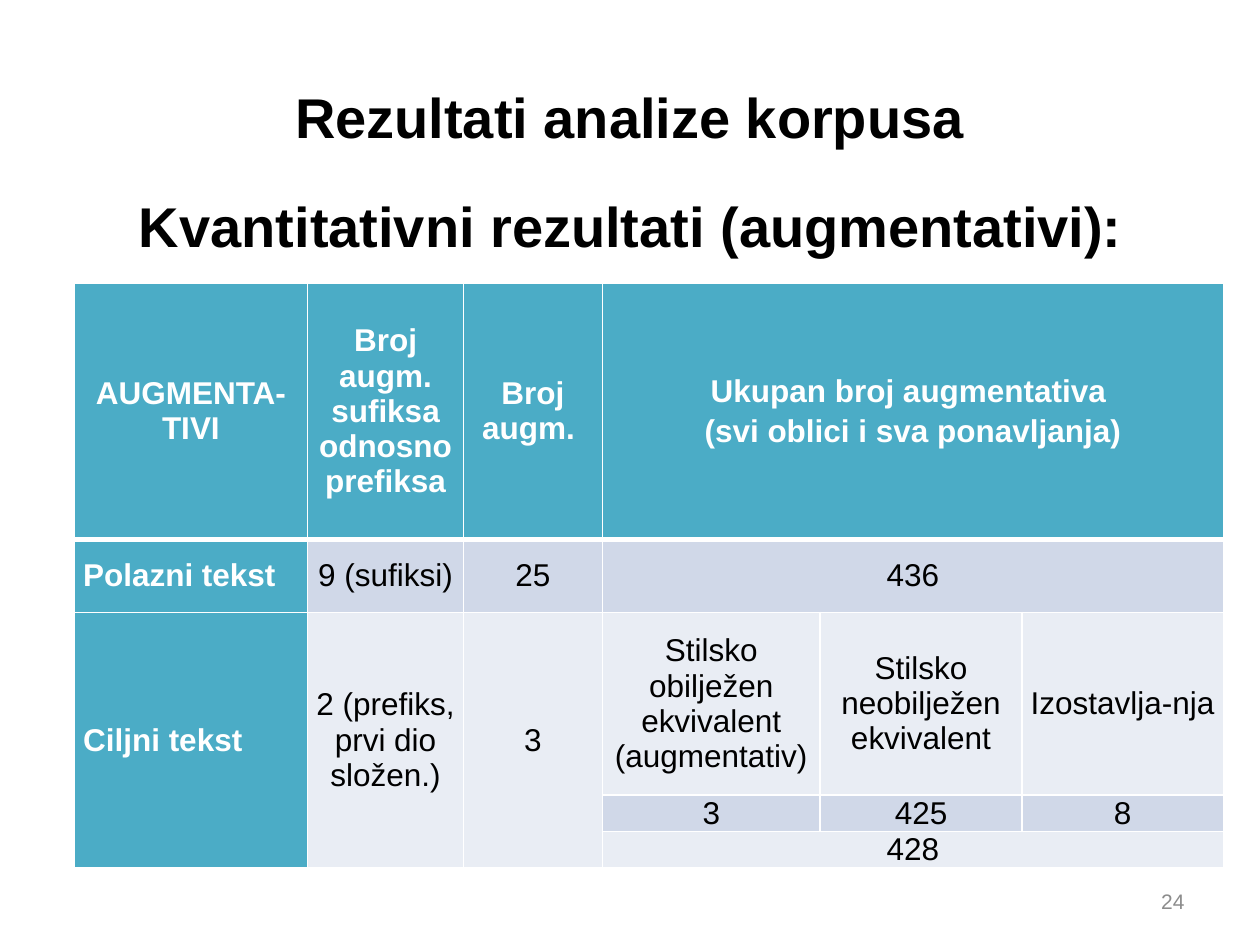
"""Builds the slide with quantitative results on augmentatives."""
from lxml import etree
from pptx import Presentation
from pptx import util as u
from pptx.dml.color import RGBColor
from pptx.enum import text
from pptx.oxml import ns

COLOURS = {"ink": "000000", "paper": "FFFFFF", "accent": "4BACC6",
           "dark": "D0D8E8", "light": "E9EDF4", "muted": "8C8C8C"}
COLUMNS = [1.85, 1.24, 1.1, 1.73, 1.6, 1.6]
ROWS = [2.03, 0.58, 1.45, 0.29, 0.29]
BANDS = ["accent", "dark", "light", "dark", "light"]
CENTER, LEFT, RIGHT = (text.PP_ALIGN.CENTER, text.PP_ALIGN.LEFT,
                       text.PP_ALIGN.RIGHT)
MIDDLE = text.MSO_ANCHOR.MIDDLE

ENTRIES = {
    (0, 0): "AUGMENTA-TIVI",
    (0, 1): "Broj augm. sufiksa odnosno prefiksa",
    (0, 2): "Broj augm. ",
    (0, 3): "Ukupan broj augmentativa \n(svi oblici i sva ponavljanja)",
    (1, 0): "Polazni tekst", (1, 1): "9 (sufiksi)", (1, 2): "25", (1, 3): "436",
    (2, 0): "Ciljni tekst", (2, 1): "2 (prefiks, prvi dio složen.)", (2, 2): "3",
    (2, 3): "Stilsko obilježen ekvivalent (augmentativ)",
    (2, 4): "Stilsko neobilježen ekvivalent", (2, 5): "Izostavlja-nja",
    (3, 3): "3", (3, 4): "425", (3, 5): "8", (4, 3): "428",
}
MERGES = [((0, 3), (0, 5)), ((1, 3), (1, 5)), ((4, 3), (4, 5)),
          ((2, 0), (4, 0)), ((2, 1), (4, 1)), ((2, 2), (4, 2))]


def apply(target, values):
    """Set every attribute named in values on target."""
    for attribute, value in values.items():
        setattr(target, attribute, value)


def box(left, top, width, height):
    """Return a position and size, given in inches, as a dict."""
    return {"left": u.Inches(left), "top": u.Inches(top),
            "width": u.Inches(width), "height": u.Inches(height)}


def write(frame, wording, size, colour, bold=False, align=CENTER, **spacing):
    """Fill a text frame, one paragraph for each line of wording."""
    frame.text = wording
    for paragraph in frame.paragraphs:
        apply(paragraph, {"alignment": align, **spacing})
        for run in paragraph.runs:
            apply(run.font, {"name": "Arial", "size": u.Pt(size), "bold": bold})
            run.font.color.rgb = RGBColor.from_string(COLOURS[colour])


def add_borders(cell, bottom):
    """Draw white cell borders with the given bottom width in points."""
    properties = cell._tc.get_or_add_tcPr()
    widths = {"a:lnL": 1, "a:lnR": 1, "a:lnT": 1, "a:lnB": bottom}
    for position, (side, width) in enumerate(widths.items()):
        line = etree.Element(ns.qn(side), w=str(u.Pt(width)))
        fill = etree.SubElement(line, ns.qn("a:solidFill"))
        etree.SubElement(fill, ns.qn("a:srgbClr"), val=COLOURS["paper"])
        properties.insert(position, line)


def add_headings(slide):
    """Place the title and the unbulleted subtitle."""
    title, subtitle = slide.placeholders
    apply(title, box(0.5, 0.3, 9, 1.25))
    apply(subtitle, box(0.51, 1.47, 9, 4.95))
    write(title.text_frame, "Rezultati analize korpusa", 32, "ink", True)
    write(subtitle.text_frame, "Kvantitativni rezultati (augmentativi):",
          32, "ink", True)
    properties = subtitle.text_frame.paragraphs[0]._p.get_or_add_pPr()
    apply(properties, {"algn": CENTER})
    properties.set("marL", "0")
    properties.set("indent", "0")
    etree.SubElement(properties, ns.qn("a:buNone"))


def add_results(slide):
    """Add the results table with its merged cells."""
    place = box(0.59, 2.25, sum(COLUMNS), sum(ROWS))
    results = slide.shapes.add_table(len(ROWS), len(COLUMNS), **place).table
    for column, width in zip(results.columns, COLUMNS):
        column.width = u.Inches(width)
    for row, height in zip(results.rows, ROWS):
        row.height = u.Inches(height)
    for r, band in enumerate(BANDS):
        for c in range(len(COLUMNS)):
            cell = results.cell(r, c)
            heading = r == 0 or c == 0
            apply(cell, {"vertical_anchor": MIDDLE,
                         "margin_left": u.Inches(0.07),
                         "margin_right": u.Inches(0.07),
                         "margin_top": 0, "margin_bottom": 0})
            cell.fill.solid()
            cell.fill.fore_color.rgb = RGBColor.from_string(
                COLOURS["accent" if heading else band])
            add_borders(cell, 3 if r == 0 else 1)
            write(cell.text_frame, ENTRIES.get((r, c), ""), 18,
                  "paper" if heading else "ink", heading,
                  LEFT if c == 0 and r > 0 else CENTER, space_after=u.Pt(3))
    for first, last in MERGES:
        results.cell(*first).merge(results.cell(*last))


def add_page_number(slide):
    """Add the page number at the lower right."""
    number = slide.shapes.add_textbox(**box(7.17, 6.95, 2.33, 0.4)).text_frame
    apply(number, {"word_wrap": True, "vertical_anchor": MIDDLE})
    write(number, "24", 12, "muted", align=RIGHT)


def main():
    """Build and save the slide."""
    deck = Presentation()
    apply(deck, {"slide_width": u.Inches(10), "slide_height": u.Inches(7.5)})
    slide = deck.slides.add_slide(deck.slide_layouts[1])
    add_headings(slide)
    add_results(slide)
    add_page_number(slide)
    deck.save("out.pptx")


if __name__ == "__main__":
    main()
